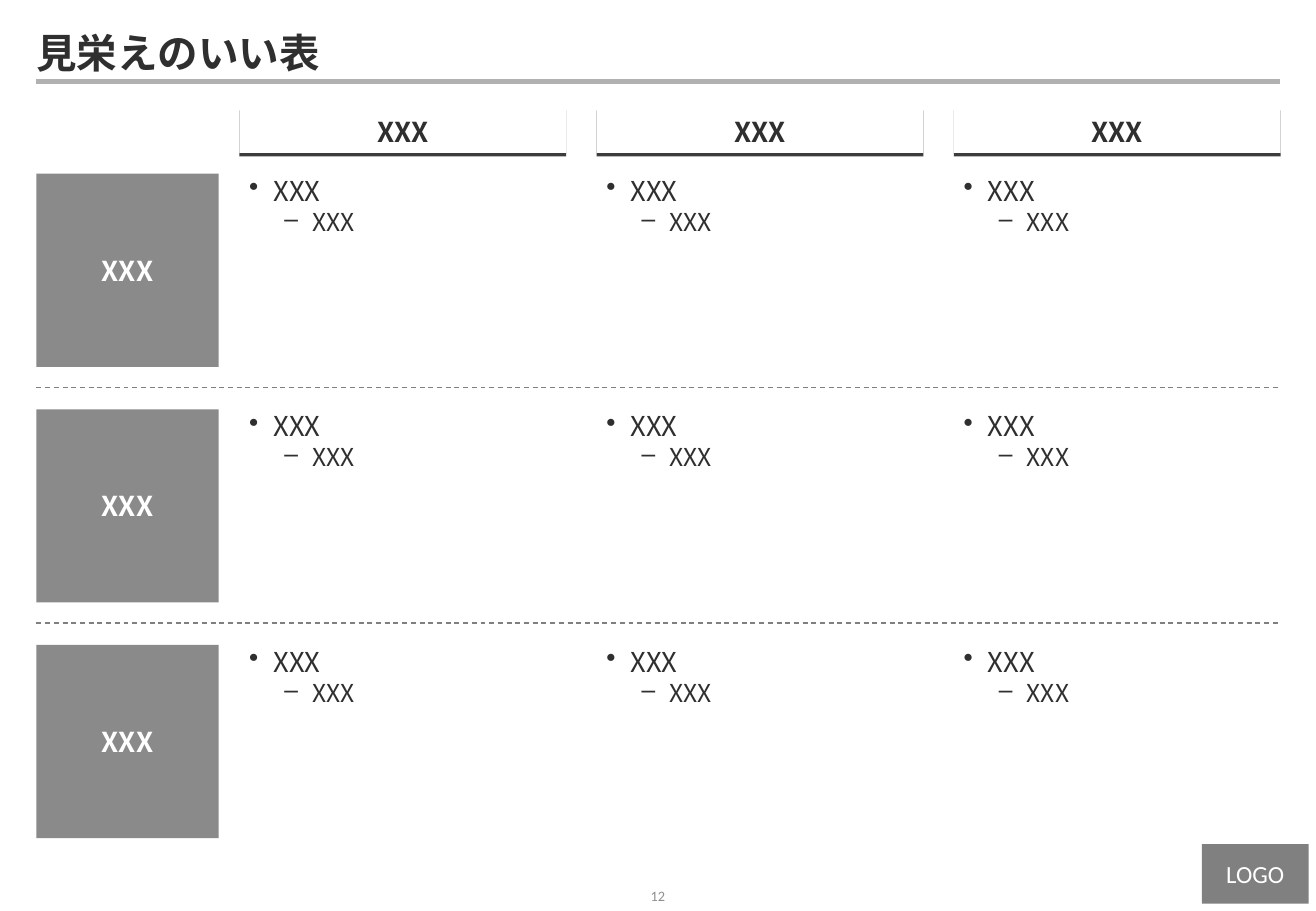
from dataclasses import dataclass

from lxml.etree import SubElement
from pptx import Presentation
from pptx.dml.color import RGBColor
from pptx.enum.dml import MSO_LINE_DASH_STYLE as Dash
from pptx.enum.shapes import MSO_CONNECTOR as Connector, MSO_SHAPE as Shape
from pptx.enum.text import MSO_ANCHOR as Anchor, PP_ALIGN as Align
from pptx.oxml.ns import qn
from pptx.util import Inches, Pt

COLORS = {
    "text": "2F2F2F",
    "white": "FFFFFF",
    "row": "8A8A8A",
    "logo": "808080",
    "divider": "808080",
    "title_rule": "B1B1B1",
    "header_rule": "3C3C3C",
    "page_number": "8F8F8F",
}
JAPANESE, LATIN = "Noto Sans CJK JP", "Calibri"

LEFT, RIGHT = 0.3, 10.53
ROW_LABELS = ["XXX", "XXX", "XXX"]
ROW_TOP, ROW_PITCH, ROW_HEIGHT, LABEL_WIDTH = 1.43, 1.94, 1.59, 1.5
COLUMN_HEADERS = ["XXX", "XXX", "XXX"]
COLUMN_LEFT, COLUMN_PITCH, COLUMN_WIDTH = 1.97, 2.94, 2.69
HEADER_TOP, HEADER_HEIGHT = 0.88, 0.38
DIVIDER_TOP = 3.19


@dataclass(frozen=True)
class Box:
    left: float
    top: float
    width: float
    height: float

    def lengths(self) -> list:
        return [Inches(value) for value in (self.left, self.top, self.width, self.height)]


@dataclass(frozen=True)
class TextStyle:
    size: float
    color: str = "text"
    bold: bool = False
    font: str = JAPANESE


@dataclass(frozen=True)
class ListItem:
    text: str
    level: int
    bullet: str
    indent: float
    hanging: float
    style: TextStyle


LABEL_STYLE = TextStyle(16.2, "white", bold=True)
HEADER_STYLE = TextStyle(16.2, bold=True)
CELL_ITEMS = [
    ListItem("XXX", 0, "•", 0.2, 0.2, TextStyle(16.2)),
    ListItem("XXX", 1, "–", 0.52, 0.23, TextStyle(14.6)),
]


def rgb(name: str) -> RGBColor:
    return RGBColor.from_string(COLORS[name])


def style_paragraph(paragraph, style: TextStyle) -> None:
    """Format the paragraph for both Latin and East Asian text."""
    font = paragraph.font
    font.size, font.bold, font.name = Pt(style.size), style.bold, style.font
    font.color.rgb = rgb(style.color)
    properties = paragraph._p.pPr.find(qn("a:defRPr"))
    SubElement(properties, qn("a:ea"), typeface=style.font)


def set_margins(frame, left: float, top: float, right: float, bottom: float) -> None:
    frame.margin_left, frame.margin_top = Inches(left), Inches(top)
    frame.margin_right, frame.margin_bottom = Inches(right), Inches(bottom)


def write_centred(frame, text: str, style: TextStyle, anchor=Anchor.MIDDLE) -> None:
    frame.word_wrap = True
    frame.vertical_anchor = anchor
    paragraph = frame.paragraphs[0]
    paragraph.text = text
    paragraph.alignment = Align.CENTER
    style_paragraph(paragraph, style)


def add_block(slide, box: Box, fill: str, text: str, style: TextStyle, anchor=Anchor.MIDDLE):
    shape = slide.shapes.add_shape(Shape.RECTANGLE, *box.lengths())
    shape.shadow.inherit = False
    shape.fill.solid()
    shape.fill.fore_color.rgb = rgb(fill)
    shape.line.fill.background()
    set_margins(shape.text_frame, 0.08, 0.04, 0.08, 0.04)
    write_centred(shape.text_frame, text, style, anchor)
    return shape


def add_header(slide, box: Box, text: str) -> None:
    """Add a column header whose hard shadow forms its underline."""
    header = add_block(slide, box, "white", text, HEADER_STYLE, Anchor.BOTTOM)
    effects = header._element.spPr.find(qn("a:effectLst"))
    shadow = SubElement(effects, qn("a:outerShdw"), blurRad="0", dist=str(Pt(2)),
                        dir="5400000", algn="t", rotWithShape="0")
    SubElement(shadow, qn("a:srgbClr"), val=COLORS["header_rule"])


def add_rule(slide, top: float, color: str, width: float, dash=None) -> None:
    rule = slide.shapes.add_connector(
        Connector.STRAIGHT, Inches(LEFT), Inches(top), Inches(RIGHT), Inches(top))
    rule.line.color.rgb = rgb(color)
    rule.line.width = Pt(width)
    if dash is not None:
        rule.line.dash_style = dash
    SubElement(rule._element.spPr, qn("a:effectLst"))


def add_list(slide, box: Box, items: list[ListItem]) -> None:
    frame = slide.shapes.add_textbox(*box.lengths()).text_frame
    frame.word_wrap = True
    set_margins(frame, 0.08, 0, 0.08, 0.04)
    for index, item in enumerate(items):
        paragraph = frame.add_paragraph() if index else frame.paragraphs[0]
        paragraph.text = item.text
        paragraph.level = item.level
        properties = paragraph._p.get_or_add_pPr()
        properties.set("marL", str(Inches(item.indent)))
        properties.set("indent", str(-Inches(item.hanging)))
        SubElement(properties, qn("a:buChar"), char=item.bullet)
        style_paragraph(paragraph, item.style)


def set_title(slide, text: str) -> None:
    title = slide.shapes.title
    title.left, title.top, title.width, title.height = Box(LEFT, 0.25, 10.24, 0.41).lengths()
    frame = title.text_frame
    set_margins(frame, 0, 0, 0.1, 0)
    frame.vertical_anchor = Anchor.MIDDLE
    paragraph = frame.paragraphs[0]
    paragraph.text = text
    paragraph.alignment = Align.LEFT
    paragraph.line_spacing = 0.9
    style_paragraph(paragraph, TextStyle(24, bold=True))


def add_page_number(slide, number: str) -> None:
    frame = slide.shapes.add_textbox(*Box(5.1, 7.25, 0.63, 0.25).lengths()).text_frame
    set_margins(frame, 0, 0, 0, 0)
    write_centred(frame, number, TextStyle(8.5, "page_number", font=LATIN))


def main() -> None:
    presentation = Presentation()
    presentation.slide_width, presentation.slide_height = Inches(10.83), Inches(7.5)
    slide = presentation.slides.add_slide(presentation.slide_layouts.get_by_name("Title Only"))

    add_rule(slide, 0.67, "title_rule", 3)
    add_block(slide, Box(9.89, 6.95, 0.88, 0.49), "logo", "LOGO",
              TextStyle(14.6, "white", font=LATIN))
    add_page_number(slide, "12")
    set_title(slide, "見栄えのいい表")

    row_tops = [ROW_TOP + row * ROW_PITCH for row in range(len(ROW_LABELS))]
    for top, label in zip(row_tops, ROW_LABELS):
        add_block(slide, Box(LEFT, top, LABEL_WIDTH, ROW_HEIGHT), "row", label, LABEL_STYLE)
    for gap in range(len(ROW_LABELS) - 1):
        add_rule(slide, DIVIDER_TOP + gap * ROW_PITCH, "divider", 0.75, Dash.DASH)

    for column, header in enumerate(COLUMN_HEADERS):
        left = COLUMN_LEFT + column * COLUMN_PITCH
        add_header(slide, Box(left, HEADER_TOP, COLUMN_WIDTH, HEADER_HEIGHT), header)
        for top in row_tops:
            add_list(slide, Box(left, top, COLUMN_WIDTH, ROW_HEIGHT), CELL_ITEMS)

    presentation.save("out.pptx")


if __name__ == "__main__":
    main()
